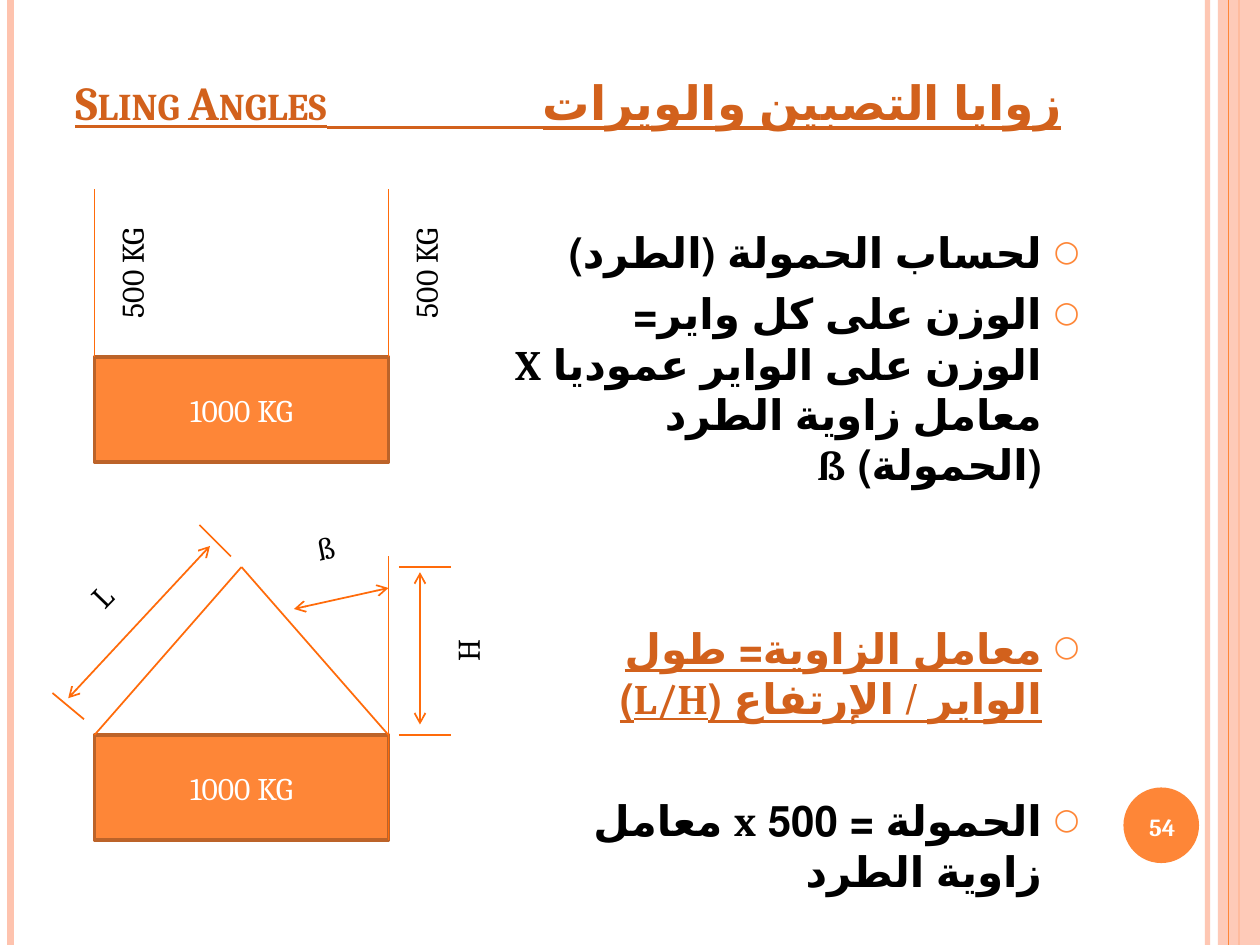
from lxml import etree
from pptx import Presentation
from pptx.dml.color import RGBColor
from pptx.enum.lang import MSO_LANGUAGE_ID
from pptx.enum.shapes import MSO_CONNECTOR, MSO_SHAPE
from pptx.enum.text import MSO_ANCHOR, PP_ALIGN
from pptx.oxml.ns import qn
from pptx.util import Inches, Pt

ARABIC = MSO_LANGUAGE_ID.ARABIC_EGYPT
STRAIGHT = MSO_CONNECTOR.STRAIGHT
RECTANGLE, OVAL = MSO_SHAPE.RECTANGLE, MSO_SHAPE.OVAL
MIDDLE, BOTTOM = MSO_ANCHOR.MIDDLE, MSO_ANCHOR.BOTTOM
CENTER, RIGHT = PP_ALIGN.CENTER, PP_ALIGN.RIGHT

FONT = "Cambria"
ORANGE, SLING, EDGE = "FE8637", "FF6B0A", "BC6329"
PEACH, ACCENT, BLACK, WHITE = "FEC3AE", "D2611C", "000000", "FFFFFF"
COLS, ROWS = 120, 90  # grid of twelve steps to the inch
LOAD_LEFT, LOAD_WIDTH, LOAD_HEIGHT = 9, 28, 10
LOAD_RIGHT = LOAD_LEFT + LOAD_WIDTH
APEX = (23, 54)
UPPER_TOP, LOWER_TOP = 34, 70

# text, colour, underlined, points of space before
FORMULAS = [
    ("لحساب الحمولة (الطرد)", BLACK, False, 6),
    ("الوزن على كل واير= الوزن على الواير عموديا X معامل زاوية الطرد (الحمولة) ß",
     BLACK, False, 6),
    ("معامل الزاوية= طول الواير / الإرتفاع (L/H)", ACCENT, True, 76),
    ("الحمولة = 500 x معامل زاوية الطرد", BLACK, False, 41),
]


def grid(*steps):
    return [Inches(step / 12) for step in steps]


def rgb(code):
    return RGBColor.from_string(code)


def add_xml(parent, tag, **attributes):
    return etree.SubElement(parent, qn(tag), attributes)


def set_alpha(parent, percent):
    color = next(parent.iter(qn("a:srgbClr")))
    add_xml(color, "a:alpha", val=str(percent * 1000))


def style_run(paragraph, size, color, bold=False, underline=False):
    font = paragraph.runs[0].font
    font.name, font.size, font.bold = FONT, Pt(size), bold
    font.underline = underline
    font.color.rgb = rgb(color)
    return font


def add_line(slide, start, end, color=SLING, width=1, arrows=False, alpha=None):
    line = slide.shapes.add_connector(STRAIGHT, *grid(*start, *end))
    line.line.color.rgb, line.line.width = rgb(color), Pt(width)
    properties = line.line._get_or_add_ln()
    if alpha:
        set_alpha(properties, alpha)
    if arrows:
        add_xml(properties, "a:headEnd", type="arrow")
        add_xml(properties, "a:tailEnd", type="arrow")
    add_xml(line._element.spPr, "a:effectLst")


def add_solid(slide, kind, box, color, alpha=None):
    solid = slide.shapes.add_shape(kind, *grid(*box))
    solid.shadow.inherit = False
    solid.fill.solid()
    solid.fill.fore_color.rgb = rgb(color)
    solid.line.fill.background()
    if alpha:
        set_alpha(solid._element.spPr, alpha)
    return solid


def write_centered(shape, text, size, color, bold=False):
    frame = shape.text_frame
    frame.word_wrap, frame.vertical_anchor = True, MIDDLE
    frame.text = text
    frame.paragraphs[0].alignment = CENTER
    style_run(frame.paragraphs[0], size, color, bold)


def add_label(slide, text, center, rotation=0, size=18, color=BLACK, bold=False,
              width=14, height=5):
    x, y = center
    label = slide.shapes.add_textbox(
        *grid(x - width / 2, y - height / 2, width, height))
    label.rotation = rotation
    write_centered(label, text, size, color, bold)


def add_load(slide, top):
    load = add_solid(slide, RECTANGLE,
                     (LOAD_LEFT, top, LOAD_WIDTH, LOAD_HEIGHT), ORANGE)
    load.line.color.rgb, load.line.width = rgb(EDGE), Pt(2)
    write_centered(load, "1000 KG", 18, WHITE)


def add_side_bands(slide):
    for x, color, width, alpha in [(115, PEACH, 3, 93), (1, PEACH, 4.5, None),
                                   (118, ORANGE, 1.5, None)]:
        add_line(slide, (x, 0), (x, ROWS), color, width, alpha=alpha)
    add_solid(slide, RECTANGLE, (116, 0, COLS - 116, ROWS), PEACH, alpha=87)
    add_line(slide, (117, 0), (117, ROWS), ORANGE, 0.75)
    add_solid(slide, OVAL, (107, 75, 7.2, 7.2), ORANGE)


def add_title(slide):
    frame = slide.shapes.add_textbox(*grid(6, 3.6, 98, 9.4)).text_frame
    frame.word_wrap, frame.vertical_anchor = True, BOTTOM
    title = frame.paragraphs[0]
    title.text = "Sling Angles\tزوايا التصبين والويرات"
    stops = add_xml(title._p.get_or_add_pPr(), "a:tabLst")
    add_xml(stops, "a:tab", pos=str(Inches(3.71)), algn="l")
    font = style_run(title, 27, ACCENT, bold=True, underline=True)
    font.language_id = ARABIC
    title.runs[0]._r.get_or_add_rPr().set("cap", "small")
    # the underline runs on across the gap
    add_line(slide, (31.1, 12.1), (51.7, 12.1), ACCENT, 1.75)


def add_formulas(slide):
    frame = slide.shapes.add_textbox(*grid(47, 21, 57, 64)).text_frame
    frame.word_wrap = True
    for index, (text, color, underline, space) in enumerate(FORMULAS):
        formula = frame.add_paragraph() if index else frame.paragraphs[0]
        formula.text = text
        formula.alignment, formula.space_before = RIGHT, Pt(space)
        font = style_run(formula, 24, color, bold=True, underline=underline)
        font.language_id = ARABIC
        add_rtl_bullet(formula)


def add_rtl_bullet(paragraph):
    properties = paragraph._p.get_or_add_pPr()
    indent = Inches(0.3)
    for name, value in [("rtl", 1), ("marL", indent), ("indent", -indent)]:
        properties.set(name, str(value))
    add_xml(add_xml(properties, "a:buClr"), "a:srgbClr", val=ORANGE)
    add_xml(properties, "a:buSzPct", val="70000")
    add_xml(properties, "a:buFont", typeface=FONT)
    add_xml(properties, "a:buChar", char="○")


def add_vertical_slings(slide):
    add_load(slide, UPPER_TOP)
    for x in (LOAD_RIGHT, LOAD_LEFT):
        add_line(slide, (x, UPPER_TOP), (x, 18))
        add_label(slide, "500 KG", (x + 3.5, 26), 270)


def add_angled_slings(slide):
    add_load(slide, LOWER_TOP)
    for x in (LOAD_LEFT, LOAD_RIGHT):
        add_line(slide, (x, LOWER_TOP), APEX)
    add_line(slide, (LOAD_RIGHT, LOWER_TOP + LOAD_HEIGHT), (LOAD_RIGHT, 53))
    # angle, then sling length
    add_line(slide, (28, 58), (LOAD_RIGHT, 56), arrows=True)
    add_line(slide, (6.5, 66.5), (20, 52), arrows=True)
    add_line(slide, (19, 50), (22, 53))
    add_line(slide, (5, 66), (8, 68.5))
    # height
    for y in (LOWER_TOP, APEX[1]):
        add_line(slide, (38, y), (43, y))
    add_line(slide, (40, 69), (40, 54.5), arrows=True)
    add_label(slide, "H", (44.5, 62), 270)
    add_label(slide, "L", (9.66, 56.8), 314.1)
    add_label(slide, "ß", (31, 52.1), 348.4, width=8.2)


def main():
    deck = Presentation()
    deck.slide_width, deck.slide_height = grid(COLS, ROWS)
    slide = deck.slides.add_slide(deck.slide_layouts[6])
    add_side_bands(slide)
    add_title(slide)
    add_formulas(slide)
    add_vertical_slings(slide)
    add_angled_slings(slide)
    add_label(slide, "54", (110.7, 78.7), size=14, color=WHITE, bold=True,
              width=8, height=6.8)
    deck.save("out.pptx")


if __name__ == "__main__":
    main()
